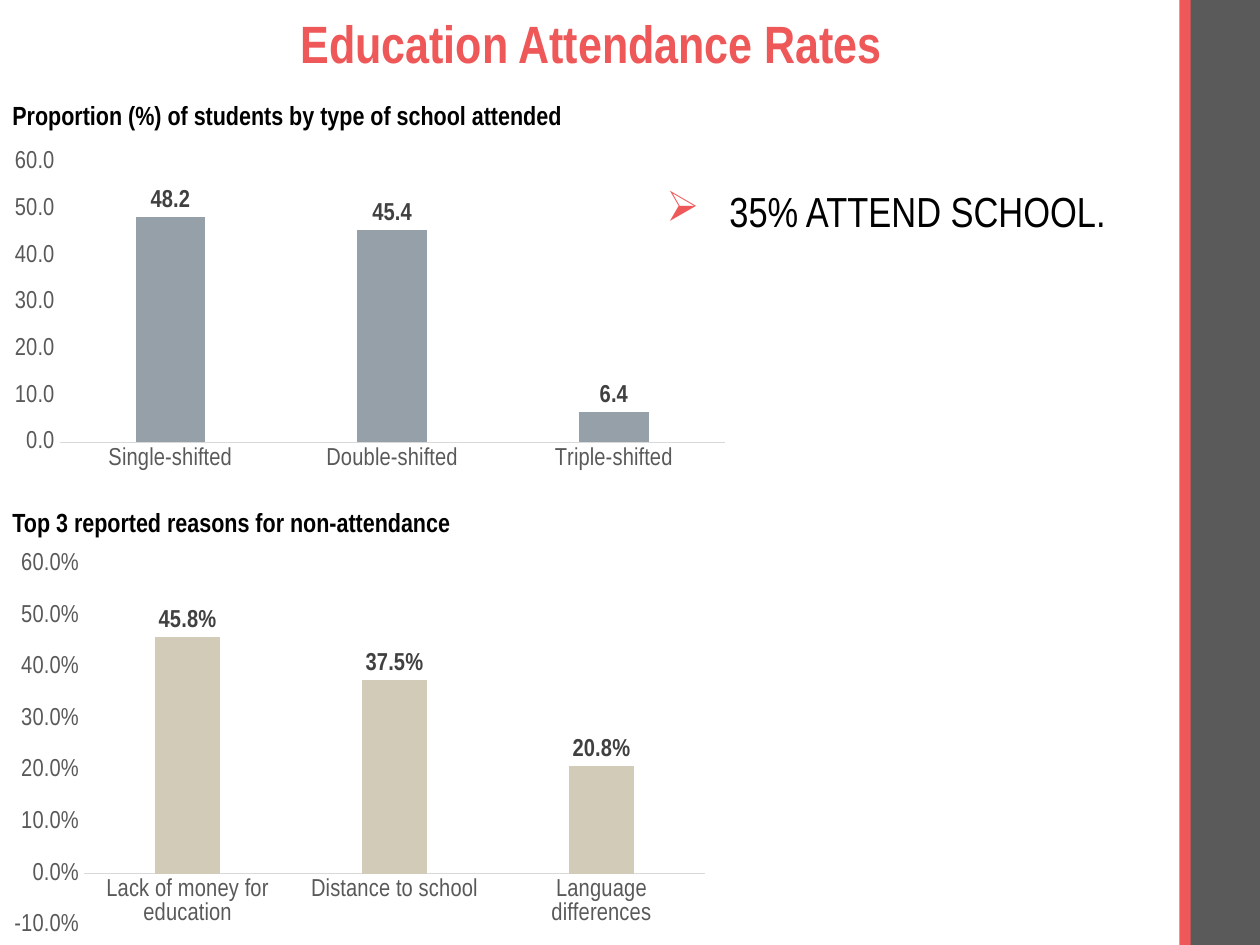
from dataclasses import dataclass

from lxml import etree
from pptx import Presentation
from pptx.chart.data import CategoryChartData
from pptx.dml.color import RGBColor
from pptx.enum.chart import XL_CHART_TYPE, XL_LABEL_POSITION, XL_TICK_MARK
from pptx.enum.shapes import MSO_SHAPE
from pptx.enum.text import MSO_ANCHOR, PP_ALIGN
from pptx.oxml.ns import qn
from pptx.util import Inches, Pt

COLUMNS = XL_CHART_TYPE.COLUMN_CLUSTERED
ABOVE_BAR = XL_LABEL_POSITION.OUTSIDE_END
NO_TICK = XL_TICK_MARK.NONE
RECTANGLE = MSO_SHAPE.RECTANGLE
MIDDLE, TOP = MSO_ANCHOR.MIDDLE, MSO_ANCHOR.TOP
CENTER, LEFT = PP_ALIGN.CENTER, PP_ALIGN.LEFT


@dataclass(frozen=True)
class Theme:
    font: str = "Arial Narrow"
    accent: str = "EE5859"
    sidebar: str = "5A5A5A"
    text: str = "000000"
    axis_text: str = "595959"
    axis_line: str = "D9D9D9"
    value_text: str = "404040"
    school_bars: str = "95A0A9"
    reason_bars: str = "D2CBB8"
    title_size: int = 30
    heading_size: int = 15
    bullet_size: int = 24
    chart_size: int = 14


THEME = Theme()


def style_font(font, size, color, bold=False):
    font.name = THEME.font
    font.size = Pt(size)
    font.bold = bold
    font.color.rgb = RGBColor.from_string(color)


def add_band(slide, left, width, color):
    """Full-height vertical band."""
    band = slide.shapes.add_shape(
        RECTANGLE, Inches(left), 0, Inches(width), Inches(7.5))
    band.shadow.inherit = False
    band.fill.solid()
    band.fill.fore_color.rgb = RGBColor.from_string(color)
    band.line.fill.background()


def add_text(slide, box, text, size, color, bold=False, align=LEFT, anchor=TOP):
    frame = slide.shapes.add_textbox(*map(Inches, box)).text_frame
    frame.word_wrap = True
    frame.vertical_anchor = anchor
    frame.text = text
    paragraph = frame.paragraphs[0]
    paragraph.alignment = align
    style_font(paragraph.runs[0].font, size, color, bold)
    return paragraph


def add_bullet(paragraph, symbol, color):
    """Hanging bullet with its own colour."""
    properties = paragraph._p.get_or_add_pPr()
    properties.set("marL", str(Inches(0.5)))
    properties.set("indent", str(-Inches(0.5)))
    bullet_color = etree.SubElement(properties, qn("a:buClr"))
    etree.SubElement(bullet_color, qn("a:srgbClr"), val=color)
    etree.SubElement(properties, qn("a:buChar"), char=symbol)


def add_column_chart(slide, box, rates, color, number_format, axis_range, step):
    data = CategoryChartData(number_format=number_format)
    data.categories = list(rates)
    data.add_series("Series 1", list(rates.values()))
    chart = slide.shapes.add_chart(COLUMNS, *map(Inches, box), data).chart
    chart.has_title = False
    chart.has_legend = False
    style_font(chart.font, THEME.chart_size, THEME.text)

    # Axes
    for axis in (chart.category_axis, chart.value_axis):
        axis.has_major_gridlines = False
        axis.major_tick_mark = axis.minor_tick_mark = NO_TICK
        style_font(axis.tick_labels.font, THEME.chart_size, THEME.axis_text)
    baseline = chart.category_axis.format.line
    baseline.color.rgb = RGBColor.from_string(THEME.axis_line)
    baseline.width = Pt(0.75)
    scale = chart.value_axis
    scale.format.line.fill.background()
    scale.minimum_scale, scale.maximum_scale = axis_range
    scale.major_unit = step
    scale.tick_labels.number_format = number_format
    scale.tick_labels.number_format_is_linked = False

    # Bars and their values
    bars = chart.plots[0]
    bars.vary_by_categories = False
    bars.gap_width = 219
    bars.overlap = -27
    fill = bars.series[0].format.fill
    fill.solid()
    fill.fore_color.rgb = RGBColor.from_string(color)
    values = bars.series[0].data_labels
    values.show_value = True
    values.position = ABOVE_BAR
    values.number_format = number_format
    values.number_format_is_linked = False
    style_font(values.font, THEME.chart_size, THEME.value_text, bold=True)


def main():
    deck = Presentation()
    deck.slide_width, deck.slide_height = Inches(10), Inches(7.5)
    slide = deck.slides.add_slide(deck.slide_layouts[6])

    # Right-hand edge
    add_band(slide, 9.43, 0.57, THEME.sidebar)
    add_band(slide, 9.36, 0.09, THEME.accent)

    title = add_text(slide, (0.35, 0, 8.69, 0.74), "Education Attendance Rates",
                     THEME.title_size, THEME.accent, True, CENTER, MIDDLE)
    title.line_spacing = 0.9

    # School types
    add_text(slide, (0, 0.74, 4.91, 0.35),
             "Proportion (%) of students by type of school attended",
             THEME.heading_size, THEME.text, bold=True)
    school_types = {"Single-shifted": 48.2, "Double-shifted": 45.4,
                    "Triple-shifted": 6.4}
    add_column_chart(slide, (0, 1.14, 5.87, 2.65), school_types,
                     THEME.school_bars, "0.0", (0, 60), 10)

    # Reasons for non-attendance
    add_text(slide, (0, 3.97, 3.93, 0.35),
             "Top 3 reported reasons for non-attendance",
             THEME.heading_size, THEME.text, bold=True)
    reasons = {"Lack of money for education": 0.458,
               "Distance to school": 0.375, "Language differences": 0.208}
    add_column_chart(slide, (0, 4.32, 5.71, 3.18), reasons,
                     THEME.reason_bars, "0.0%", (-0.1, 0.6), 0.1)

    # Key finding
    finding = add_text(slide, (5.19, 1.47, 4.81, 3.36), "35% ATTEND SCHOOL.",
                       THEME.bullet_size, THEME.text)
    finding.line_spacing = 0.9
    add_bullet(finding, "➢", THEME.accent)

    deck.save("out.pptx")


if __name__ == "__main__":
    main()
